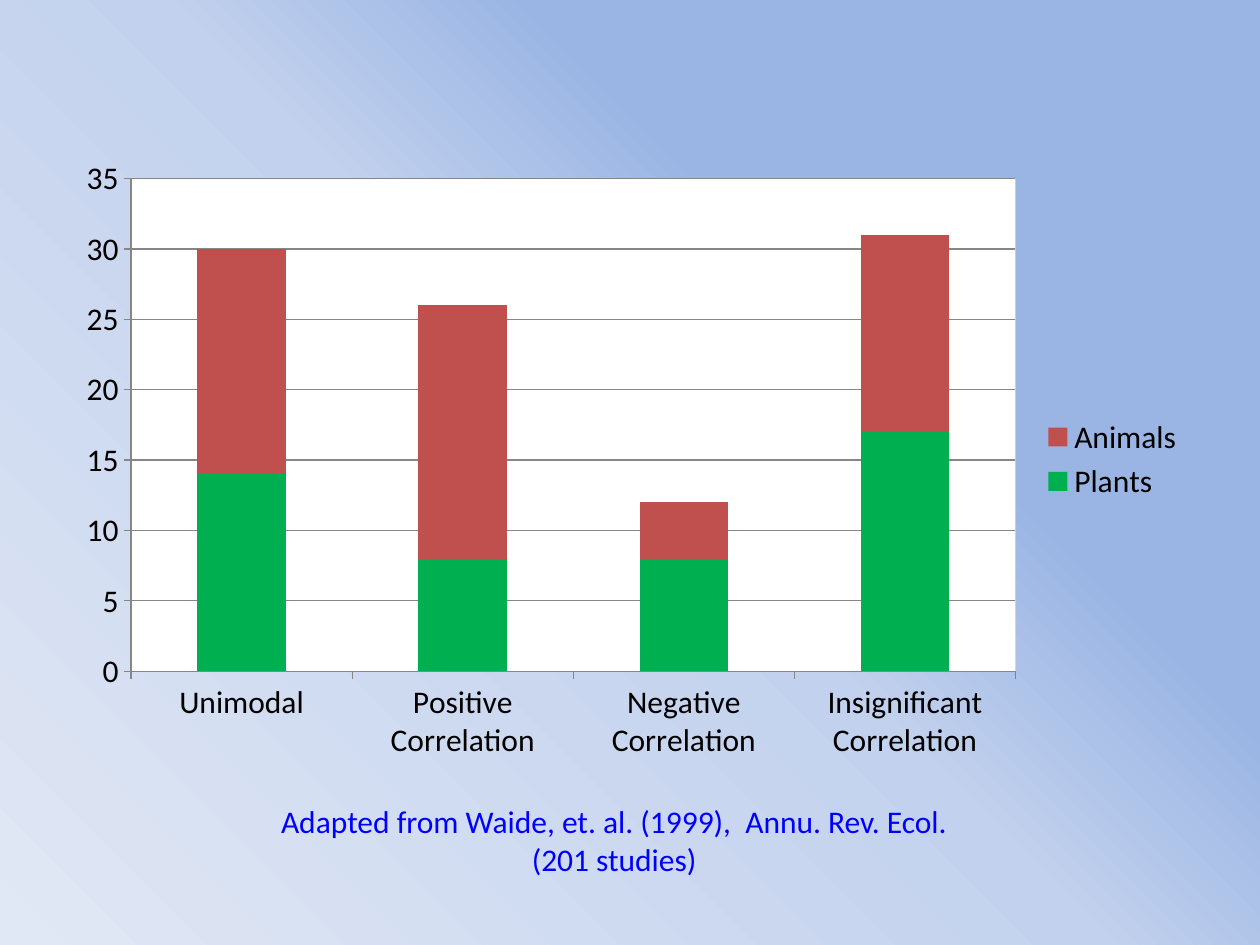
from lxml import etree
from pptx import Presentation
from pptx.chart.data import CategoryChartData
from pptx.dml.color import RGBColor
from pptx.enum.chart import XL_CHART_TYPE, XL_LEGEND_POSITION, XL_TICK_MARK
from pptx.enum.text import MSO_ANCHOR, MSO_AUTO_SIZE, PP_ALIGN
from pptx.oxml import parse_xml
from pptx.oxml.ns import nsdecls, qn
from pptx.util import Inches, Pt

STACKED = XL_CHART_TYPE.COLUMN_STACKED
LEGEND_RIGHT = XL_LEGEND_POSITION.RIGHT
TICK_OUTSIDE = XL_TICK_MARK.OUTSIDE
TICK_NONE = XL_TICK_MARK.NONE
MIDDLE = MSO_ANCHOR.MIDDLE
CENTER = PP_ALIGN.CENTER
NO_AUTOFIT = MSO_AUTO_SIZE.NONE

FONT = "Calibri"
TEXT_SIZE = 18
AXIS_GRAY = "868686"
BACKGROUND_STOPS = [(33, "9AB5E4"), (50, "C2D1ED"), (100, "E1E8F5")]
CITATION = "Adapted from Waide, et. al. (1999),  Annu. Rev. Ecol.\v(201 studies)"
CATEGORIES = ["Unimodal", "Positive Correlation", "Negative Correlation",
              "Insignificant Correlation"]
SERIES = {
    "Plants": ([14, 8, 8, 17], "00B050"),
    "Animals": ([16, 18, 4, 14], "C0504D"),
}
PLOT_LAYOUT = {"x": 0.06, "y": 0.05, "w": 0.78, "h": 0.79}


def color(hex_value):
    return RGBColor.from_string(hex_value)


def set_attributes(target, values):
    for name, value in values.items():
        setattr(target, name, value)


def set_font(font, hex_value):
    set_attributes(font, {"name": FONT, "size": Pt(TEXT_SIZE)})
    font.color.rgb = color(hex_value)


def set_background(slide):
    """Fill the background with a radial gradient centred at the top right."""
    slide.background.fill.solid()
    properties = slide.element.find(".//" + qn("p:bgPr"))
    stops = "".join(
        f'<a:gs pos="{position * 1000}"><a:srgbClr val="{hex_value}"/></a:gs>'
        for position, hex_value in BACKGROUND_STOPS)
    gradient = parse_xml(
        f'<a:gradFill {nsdecls("a")} rotWithShape="1"><a:gsLst>{stops}</a:gsLst>'
        '<a:path path="circle"><a:fillToRect l="100000" b="100000"/></a:path>'
        '</a:gradFill>')
    properties.replace(properties.find(qn("a:solidFill")), gradient)


def add_citation(slide):
    title = slide.shapes.title
    set_attributes(title, {"left": Inches(0.5), "top": Inches(6.33),
                           "width": Inches(8.75), "height": Inches(0.67)})
    frame = title.text_frame
    set_attributes(frame, {"auto_size": NO_AUTOFIT, "word_wrap": True,
                           "vertical_anchor": MIDDLE})
    paragraph = frame.paragraphs[0]
    paragraph.text = CITATION
    paragraph.alignment = CENTER
    for run in paragraph.runs:
        set_font(run.font, "0000FF")


def format_plot_area(chart):
    """Place the inner plot area and fill it white."""
    plot_area = chart.element.find(".//" + qn("c:plotArea"))
    for layout in plot_area.findall(qn("c:layout")):
        plot_area.remove(layout)
    layout = etree.Element(qn("c:layout"))
    manual = etree.SubElement(layout, qn("c:manualLayout"))
    settings = {"layoutTarget": "inner", "xMode": "edge", "yMode": "edge",
                **PLOT_LAYOUT}
    for name, value in settings.items():
        etree.SubElement(manual, qn("c:" + name), val=str(value))
    plot_area.insert(0, layout)
    plot_area.append(parse_xml(
        f'<c:spPr {nsdecls("c", "a")}><a:solidFill><a:srgbClr val="FFFFFF"/>'
        '</a:solidFill></c:spPr>'))


def format_axes(chart):
    value_axis = chart.value_axis
    set_attributes(value_axis, {"minimum_scale": 0, "maximum_scale": 35,
                                "major_unit": 5, "has_major_gridlines": True})
    for axis in (chart.category_axis, value_axis):
        set_attributes(axis, {"major_tick_mark": TICK_OUTSIDE,
                              "minor_tick_mark": TICK_NONE})
    for line in (chart.category_axis.format.line, value_axis.format.line,
                 value_axis.major_gridlines.format.line):
        line.color.rgb = color(AXIS_GRAY)
        line.width = Pt(0.75)


def add_study_chart(slide):
    data = CategoryChartData()
    data.categories = CATEGORIES
    for name, (values, _) in SERIES.items():
        data.add_series(name, values)
    chart = slide.shapes.add_chart(STACKED, Inches(0.5), Inches(1.17),
                                   Inches(9), Inches(4.95), data).chart
    set_attributes(chart, {"has_title": False, "has_legend": True})
    set_attributes(chart.legend, {"position": LEGEND_RIGHT,
                                  "include_in_layout": False})
    set_font(chart.font, "000000")
    plot = chart.plots[0]
    set_attributes(plot, {"gap_width": 150, "overlap": 100,
                          "vary_by_categories": False})
    for series in plot.series:
        series.format.fill.solid()
        series.format.fill.fore_color.rgb = color(SERIES[series.name][1])
    format_axes(chart)
    format_plot_area(chart)


def main():
    presentation = Presentation()
    set_attributes(presentation, {"slide_width": Inches(10),
                                  "slide_height": Inches(7.5)})
    slide = presentation.slides.add_slide(presentation.slide_layouts[5])
    set_background(slide)
    add_citation(slide)
    add_study_chart(slide)
    presentation.save("out.pptx")


if __name__ == "__main__":
    main()
